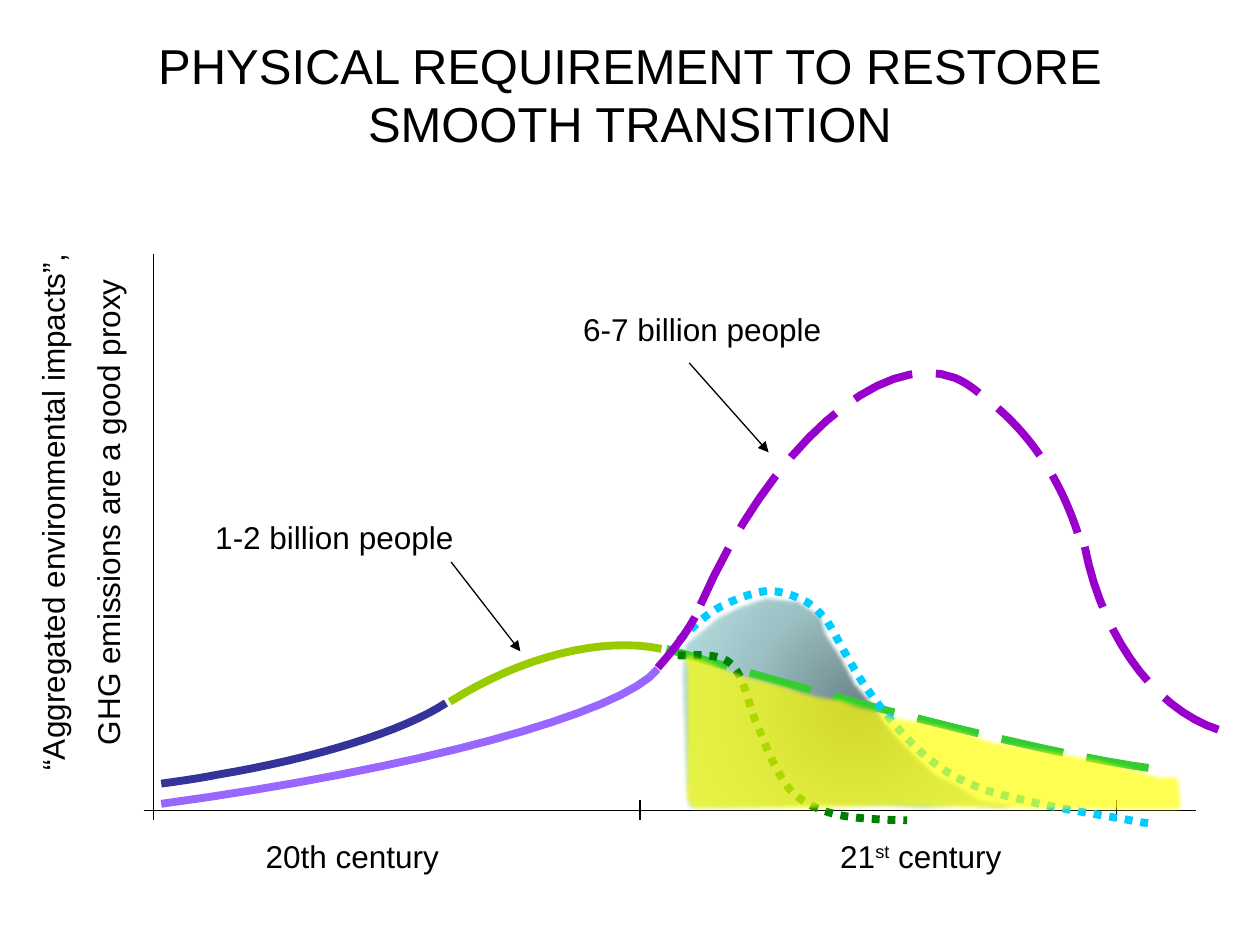
"""Build a slide on the physical requirement to restore a smooth transition."""
from lxml import etree
from pptx import Presentation
from pptx.dml.color import RGBColor
from pptx.enum.dml import MSO_LINE
from pptx.enum.shapes import MSO_CONNECTOR, MSO_SHAPE
from pptx.enum.text import MSO_ANCHOR, PP_ALIGN
from pptx.oxml import parse_xml
from pptx.oxml.ns import nsdecls, qn
from pptx.util import Cm, Pt

DASH, DOT = MSO_LINE.LONG_DASH, MSO_LINE.ROUND_DOT
LEFT, CENTER = PP_ALIGN.LEFT, PP_ALIGN.CENTER
MIDDLE, TOP = MSO_ANCHOR.MIDDLE, MSO_ANCHOR.TOP
STRAIGHT, RECTANGLE = MSO_CONNECTOR.STRAIGHT, MSO_SHAPE.RECTANGLE
FONT = "Arial"
CURVE_STEPS = 16
CM_PER_UNIT = 2.54
COLORS = {
    "black": "000000", "white": "FFFFFF", "navy": "333399", "olive": "99CC00",
    "green": "33CC33", "lilac": "9966FF", "purple": "9900CC", "dark green": "008000",
    "cyan": "00CCFF", "yellow": "FFFF00", "shade": "6D8688", "mist": "9BBFC2", "pale": "B8E3E6",
}

TITLE = ((0.5, 0.32, 9, 0.85), [[("PHYSICAL REQUIREMENT TO RESTORE SMOOTH TRANSITION", False)]])
AXIS_TITLE = ((-1.96, 3.64, 5.2, 0.85), [
    [("“Aggregated environmental impacts”,", False)],
    [("GHG emissions are a good proxy", False)],
])
LABELS = [
    ((2.01, 6.59, 2.76, 0.4), [[("20th century", False)]]),
    ((6.57, 6.59, 3.15, 0.4), [[("21", False), ("st", True), (" century", False)]]),
    ((1.61, 4.06, 2.91, 0.4), [[("1-2 billion people", False)]]),
    ((4.53, 2.41, 2.62, 0.4), [[("6-7 billion people", False)]]),
]
AXES = [(1.22, 2.02, 1.22, 6.51), (1.14, 6.43, 9.49, 6.43)]
AXES += [(x, 6.35, x, 6.51) for x in (5.08, 8.86)]
ARROWS = [(3.58, 4.46, 4.13, 5.17), (5.47, 2.88, 6.1, 3.59)]
MASK = (9.25, 5.95, 0.59, 0.32)

TREND_CURVES = [
    ("navy", None, [(1.28, 6.22), (1.42, 6.2), (1.57, 6.18), (1.72, 6.15),
                    (2.5, 6.02), (3.21, 5.8), (3.54, 5.58)]),
    ("olive", None, [(3.57, 5.57), (4.14, 5.21), (4.78, 5.05), (5.25, 5.15)]),
    ("green", DASH, [(5.29, 5.15), (7.58, 5.83), (9.48, 6.25), (9.53, 6.08)]),
    ("lilac", None, [(1.28, 6.38), (3.28, 6.11), (4.95, 5.66), (5.22, 5.31)]),
    ("dark green", DOT, [
        (5.38, 5.2), (5.44, 5.21), (5.69, 5.17), (5.79, 5.26), (5.9, 5.34), (5.94, 5.59),
        (6, 5.73), (6.06, 5.87), (6.11, 6.01), (6.17, 6.11), (6.22, 6.21), (6.26, 6.27),
        (6.34, 6.33), (6.42, 6.39), (6.52, 6.44), (6.67, 6.47), (6.81, 6.5), (7.09, 6.51),
        (7.2, 6.51)]),
    ("cyan", DOT, [
        (5.39, 5.08), (5.45, 5.03), (5.59, 4.88), (5.71, 4.82), (5.82, 4.76), (5.98, 4.7),
        (6.09, 4.69), (6.21, 4.69), (6.31, 4.73), (6.39, 4.77), (6.46, 4.81), (6.49, 4.85),
        (6.55, 4.91), (6.6, 4.98), (6.64, 5.06), (6.7, 5.17), (6.76, 5.27), (6.82, 5.39),
        (6.92, 5.52), (7.02, 5.66), (7.18, 5.85), (7.31, 5.97), (7.44, 6.08), (7.55, 6.16),
        (7.7, 6.22), (7.85, 6.29), (8, 6.32), (8.21, 6.37), (8.42, 6.42), (8.81, 6.48),
        (8.97, 6.51), (9.12, 6.54), (9.12, 6.53), (9.16, 6.54)]),
]
POPULATION_CURVES = [
    ("purple", DASH, [(5.56, 4.8), (6.11, 3.55), (6.99, 2.77), (7.58, 3),
                      (7.65, 3.03), (7.71, 3.07), (7.77, 3.12)]),
    ("purple", DASH, [(5.22, 5.3), (5.4, 5.1), (5.54, 4.89), (5.57, 4.77)]),
    ("purple", DASH, [(7.92, 3.24), (8.21, 3.49), (8.43, 3.84), (8.56, 4.25)]),
    ("purple", DASH, [(8.61, 4.34), (8.76, 5.11), (9.23, 5.71), (9.78, 5.82)]),
]
OVERSHOOT_AREA = [
    (5.44, 6.43), (5.42, 6.22), (5.39, 5.34), (5.41, 5.09), (5.51, 5.01), (5.67, 4.88),
    (5.83, 4.8), (6.06, 4.72), (6.36, 4.75), (6.48, 4.83), (6.54, 4.88), (6.58, 5.01),
    (6.71, 5.21), (6.81, 5.4), (6.94, 5.55), (7.05, 5.71), (7.16, 5.84), (7.31, 5.99),
    (7.45, 6.12), (7.65, 6.22), (7.8, 6.32), (8.07, 6.36), (8.19, 6.39), (7.96, 6.44),
    (7.65, 6.41), (7.33, 6.43), (6.99, 6.41), (6.61, 6.41), (5.78, 6.43),
]
TRANSITION_AREA = [
    (5.42, 5.18), (5.41, 5.24), (5.43, 5.34), (5.43, 6.16), (5.42, 6.36), (5.48, 6.44),
    (6.34, 6.44), (7.01, 6.42), (8.04, 6.44), (9.37, 6.45), (9.4, 6.4), (9.37, 6.14),
    (9.22, 6.14), (9.06, 6.09), (8.75, 6.01), (8.44, 5.95), (8.14, 5.9), (7.9, 5.86),
    (7.69, 5.79), (7.5, 5.74), (7.32, 5.7), (7.12, 5.67), (6.97, 5.61), (6.84, 5.58),
    (6.71, 5.53), (6.55, 5.51), (6.36, 5.46), (6.28, 5.43), (6.1, 5.38), (5.93, 5.34),
    (5.77, 5.28), (5.66, 5.23), (5.49, 5.17),
]


def lengths(values):
    return [Cm(value * CM_PER_UNIT) for value in values]


def color(name):
    return RGBColor.from_string(COLORS[name])


def sample_curve(points):
    """Return points along a chain of cubic curves."""
    samples = [points[0]]
    for first in range(0, len(points) - 1, 3):
        section = points[first:first + 4]
        for step in range(1, CURVE_STEPS + 1):
            t = step / CURVE_STEPS
            weights = ((1 - t) ** 3, 3 * t * (1 - t) ** 2, 3 * t * t * (1 - t), t ** 3)
            samples.append([sum(w * p[axis] for w, p in zip(weights, section)) for axis in (0, 1)])
    return samples


def add_outline(slide, points, close):
    start, *rest = [lengths(point) for point in points]
    builder = slide.shapes.build_freeform(*start, scale=1.0)
    builder.add_line_segments(rest, close=close)
    shape = builder.convert_to_shape()
    shape.shadow.inherit = False
    return shape


def add_curve(slide, name, dash, points):
    shape = add_outline(slide, sample_curve(points), False)
    shape.fill.background()
    shape.line.color.rgb = color(name)
    shape.line.width = Pt(4.5)
    if dash is not None:
        shape.line.dash_style = dash


def add_area(slide, points):
    shape = add_outline(slide, points, True)
    shape.line.fill.background()
    effects = shape._element.spPr.find(qn("a:effectLst"))
    etree.SubElement(effects, qn("a:softEdge"), rad="31750")
    return shape


def add_overshoot(slide):
    shape = add_area(slide, OVERSHOOT_AREA)
    stops = "".join(
        f'<a:gs pos="{position}"><a:srgbClr val="{COLORS[name]}"/></a:gs>'
        for position, name in ((0, "shade"), (50000, "mist"), (100000, "pale")))
    gradient = parse_xml(
        f'<a:gradFill {nsdecls("a")}><a:gsLst>{stops}</a:gsLst><a:path path="circle">'
        '<a:fillToRect l="50000" t="50000" r="50000" b="50000"/></a:path></a:gradFill>')
    shape._element.spPr.find(qn("a:custGeom")).addnext(gradient)


def add_transition(slide):
    shape = add_area(slide, TRANSITION_AREA)
    shape.fill.solid()
    shape.fill.fore_color.rgb = color("yellow")
    fill_color = shape._element.spPr.find(qn("a:solidFill"))[0]
    etree.SubElement(fill_color, qn("a:alpha"), val="68000")


def add_line(slide, ends, arrow=False):
    connector = slide.shapes.add_connector(STRAIGHT, *lengths(ends))
    connector.line.color.rgb = color("black")
    connector.line.width = Pt(0.75)
    if arrow:
        etree.SubElement(connector.line._get_or_add_ln(), qn("a:tailEnd"), type="triangle")
    etree.SubElement(connector._element.spPr, qn("a:effectLst"))


def add_text(slide, box, paragraphs, size=18, align=LEFT, anchor=TOP, rotation=0):
    shape = slide.shapes.add_textbox(*lengths(box))
    shape.rotation = rotation
    frame = shape.text_frame
    frame.word_wrap = True
    frame.vertical_anchor = anchor
    for index, runs in enumerate(paragraphs):
        paragraph = frame.add_paragraph() if index else frame.paragraphs[0]
        paragraph.alignment = align
        paragraph.space_before = Pt(10 if index else 0)
        for text, raised in runs:
            run = paragraph.add_run()
            run.text = text
            run.font.name, run.font.size = FONT, Pt(size)
            run.font.color.rgb = color("black")
            if raised:
                run.font._element.set("baseline", "30000")


def main():
    presentation = Presentation()
    presentation.slide_width, presentation.slide_height = lengths((10, 7.5))
    slide = presentation.slides.add_slide(presentation.slide_layouts[6])
    add_overshoot(slide)
    for ends in AXES:
        add_line(slide, ends)
    for curve in TREND_CURVES:
        add_curve(slide, *curve)
    for ends in ARROWS:
        add_line(slide, ends, arrow=True)
    for label in LABELS:
        add_text(slide, *label)
    add_text(slide, *TITLE, size=28, align=CENTER, anchor=MIDDLE)
    add_text(slide, *AXIS_TITLE, align=CENTER, rotation=270)
    mask = slide.shapes.add_shape(RECTANGLE, *lengths(MASK))
    mask.shadow.inherit = False
    mask.fill.solid()
    mask.fill.fore_color.rgb = color("white")
    mask.line.fill.background()
    for curve in POPULATION_CURVES:
        add_curve(slide, *curve)
    add_transition(slide)
    presentation.save("out.pptx")


if __name__ == "__main__":
    main()
